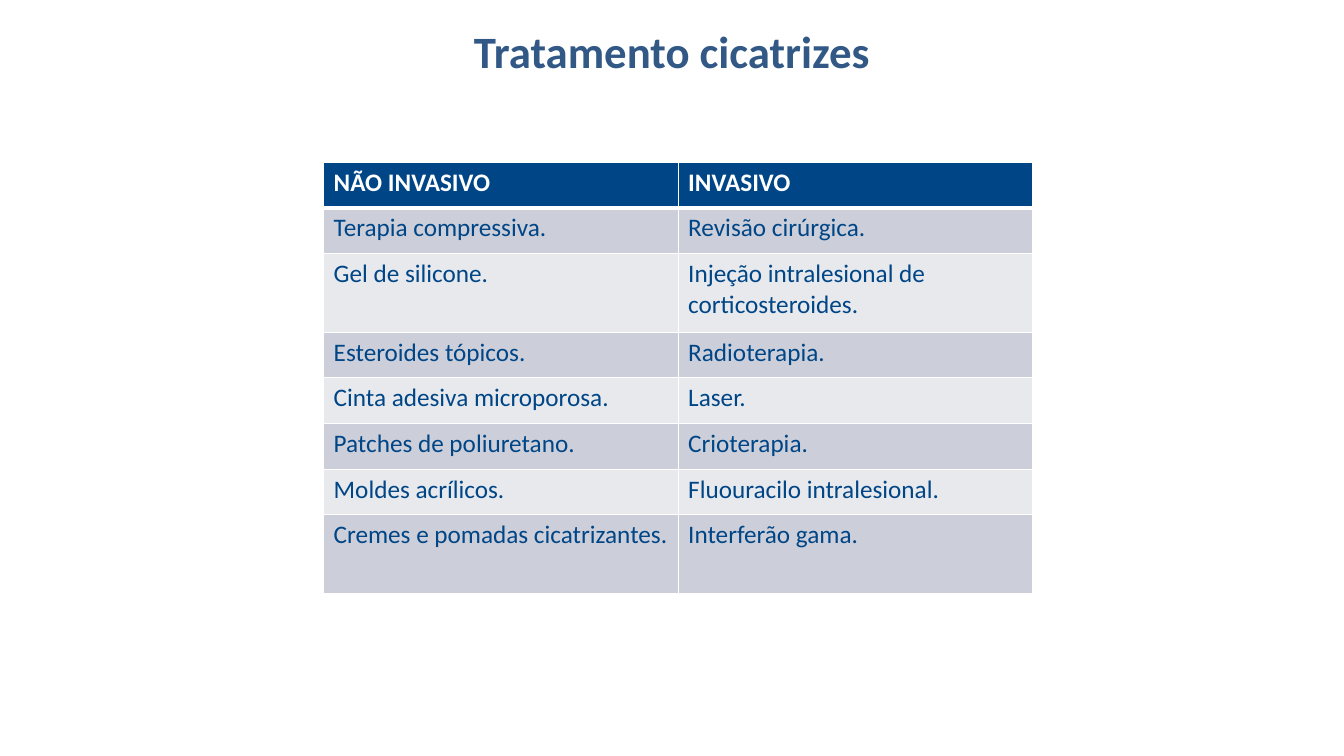
import dataclasses

import lxml.etree
import pptx
import pptx.dml.color
import pptx.enum.text
import pptx.oxml.ns
import pptx.slide
import pptx.table
import pptx.text.text
import pptx.util

WHITE = pptx.dml.color.RGBColor(0xFF, 0xFF, 0xFF)
NAVY = pptx.dml.color.RGBColor(0x00, 0x45, 0x86)
STEEL = pptx.dml.color.RGBColor(0x32, 0x58, 0x86)
DARK = pptx.dml.color.RGBColor(0xCC, 0xCF, 0xD9)
LIGHT = pptx.dml.color.RGBColor(0xE7, 0xE9, 0xED)

FONT = "Calibri"
WIDE = pptx.util.Inches(13.33)
HIGH = pptx.util.Inches(7.5)

# The grid has 100 columns and 100 rows
COL = WIDE / 100
ROW = HIGH / 100
LOW_ROW = 6.04
TALL_ROW = 10.4


@dataclasses.dataclass(frozen=True)
class Area:
    left: float
    top: float
    width: float
    height: float

    def place(self) -> tuple[int, int, int, int]:
        return (round(self.left * COL), round(self.top * ROW),
                round(self.width * COL), round(self.height * ROW))


@dataclasses.dataclass(frozen=True)
class Line:
    left: str
    right: str
    height: float = LOW_ROW


HEAD = "Tratamento cicatrizes"
LINES = [
    Line("NÃO INVASIVO", "INVASIVO"),
    Line("Terapia compressiva.", "Revisão cirúrgica."),
    Line("Gel de silicone.", "Injeção intralesional de corticosteroides.", TALL_ROW),
    Line("Esteroides tópicos.", "Radioterapia."),
    Line("Cinta adesiva microporosa.", "Laser."),
    Line("Patches de poliuretano.", "Crioterapia."),
    Line("Moldes acrílicos.", "Fluouracilo intralesional."),
    Line("Cremes e pomadas cicatrizantes.", "Interferão gama.", TALL_ROW),
]
HEAD_AREA = Area(5, 2.27, 90, 8.8)
TABLE_AREA = Area(24.08, 21.47, 52.76, sum(line.height for line in LINES))


def style(para: pptx.text.text._Paragraph, size: float,
          color: pptx.dml.color.RGBColor, bold: bool) -> None:
    for run in para.runs:
        run.font.name = FONT
        run.font.size = pptx.util.Pt(size)
        run.font.bold = bold
        run.font.color.rgb = color


def border(cell: pptx.table._Cell, side: str, points: float) -> None:
    props = cell._tc.get_or_add_tcPr()
    edge = lxml.etree.SubElement(props, pptx.oxml.ns.qn(f"a:ln{side}"),
                                 w=str(pptx.util.Pt(points)))
    fill = lxml.etree.SubElement(edge, pptx.oxml.ns.qn("a:solidFill"))
    lxml.etree.SubElement(fill, pptx.oxml.ns.qn("a:srgbClr"), val=str(WHITE))


def draw_head(slide: pptx.slide.Slide) -> None:
    title = slide.shapes.title
    title.left, title.top, title.width, title.height = HEAD_AREA.place()
    frame = title.text_frame
    frame.text = HEAD
    frame.vertical_anchor = pptx.enum.text.MSO_ANCHOR.MIDDLE
    frame.paragraphs[0].alignment = pptx.enum.text.PP_ALIGN.CENTER
    style(frame.paragraphs[0], 32, STEEL, True)


def draw_cell(cell: pptx.table._Cell, text: str, row: int) -> None:
    top = row == 0
    # A thick rule parts the header from the body
    for side in "LRTB":
        thick = (row, side) in ((0, "B"), (1, "T"))
        border(cell, side, 3 if thick else 1)
    cell.fill.solid()
    cell.fill.fore_color.rgb = NAVY if top else DARK if row % 2 else LIGHT
    cell.text_frame.text = text
    style(cell.text_frame.paragraphs[0], 18, WHITE if top else NAVY, top)


def draw_table(slide: pptx.slide.Slide) -> None:
    table = slide.shapes.add_table(len(LINES), 2, *TABLE_AREA.place()).table
    for row, line in enumerate(LINES):
        table.rows[row].height = round(line.height * ROW)
        for col, text in enumerate((line.left, line.right)):
            draw_cell(table.cell(row, col), text, row)


def main() -> None:
    deck = pptx.Presentation()
    deck.slide_width, deck.slide_height = WIDE, HIGH
    # Title Only layout
    slide = deck.slides.add_slide(deck.slide_layouts[5])
    draw_head(slide)
    draw_table(slide)
    deck.save("out.pptx")


if __name__ == "__main__":
    main()
